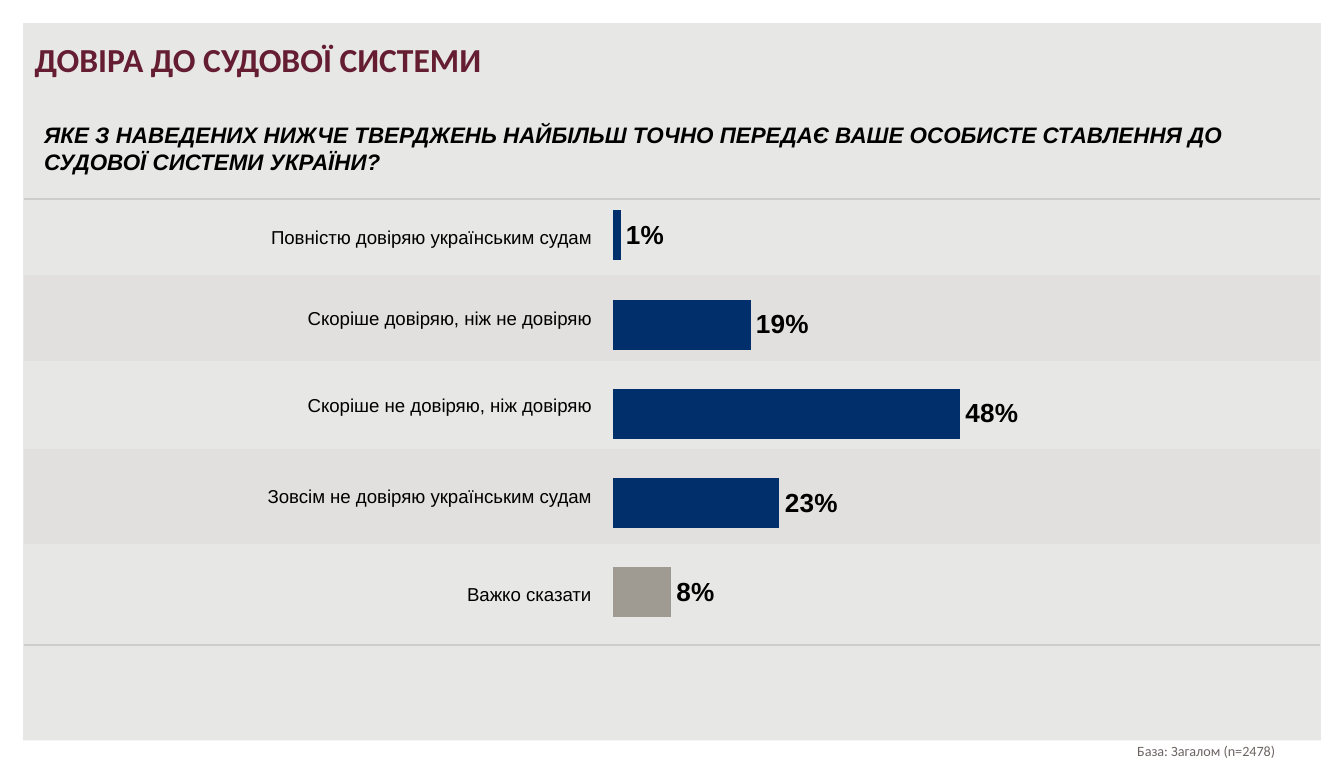
from lxml import etree
from pptx import Presentation
from pptx.chart.data import CategoryChartData
from pptx.dml.color import RGBColor
from pptx.enum.chart import XL_CHART_TYPE, XL_LABEL_POSITION
from pptx.enum.shapes import MSO_SHAPE
from pptx.enum.text import MSO_ANCHOR, PP_ALIGN
from pptx.oxml import parse_xml
from pptx.oxml.ns import nsdecls, qn
from pptx.util import Inches, Pt

BAR = XL_CHART_TYPE.BAR_CLUSTERED
OUTSIDE = XL_LABEL_POSITION.OUTSIDE_END
FRAME = MSO_SHAPE.FRAME
TOP, MIDDLE = MSO_ANCHOR.TOP, MSO_ANCHOR.MIDDLE
LEFT, CENTER, RIGHT = PP_ALIGN.LEFT, PP_ALIGN.CENTER, PP_ALIGN.RIGHT

COLORS = {
    "back": "E7E7E5", "white": "FFFFFF", "black": "000000",
    "rule": "CFCDC9", "band": "E2E0DF", "navy": "002F6C",
    "gray": "9F9B93", "wine": "651D32", "note": "6C6463",
}

ROWS = [
    ("Повністю довіряю українським судам", 0.57, 0.01),
    ("Скоріше довіряю, ніж не довіряю", 0.64, 0.19),
    ("Скоріше не довіряю, ніж довіряю", 0.65, 0.48),
    ("Зовсім не довіряю українським судам", 0.71, 0.23),
    ("Важко сказати", 0.75, 0.08),
]


def color(name):
    return RGBColor.from_string(COLORS[name])


def paint(fill, name):
    fill.solid()
    fill.fore_color.rgb = color(name)


def style(font, size, name="black", face="Arial", bold=False, italic=False):
    font.size, font.name = Pt(size), face
    font.bold, font.italic = bold, italic
    font.color.rgb = color(name)


def write(frame, text, align=LEFT, after=0, **form):
    para = frame.paragraphs[0]
    para.alignment = align
    para.space_after = Pt(after)
    run = para.add_run()
    run.text = text
    style(run.font, **form)


def add_text(slide, box, text, anchor=TOP, **form):
    frame = slide.shapes.add_textbox(*map(Inches, box)).text_frame
    frame.word_wrap = True
    frame.vertical_anchor = anchor
    write(frame, text, **form)


def add_frame(slide):
    shape = slide.shapes.add_shape(FRAME, 0, 0, Inches(10), Inches(5.68))
    shape.adjustments[0] = 0.03
    shape.shadow.inherit = False
    paint(shape.fill, "white")
    shape.line.fill.background()


def set_edges(cell, ruled):
    props = cell._tc.get_or_add_tcPr()
    for spot, side in enumerate(("L", "R", "T", "B")):
        line = etree.Element(qn(f"a:ln{side}"), w=str(Pt(1)))
        if side == ruled:
            fill = etree.SubElement(line, qn("a:solidFill"))
            etree.SubElement(fill, qn("a:srgbClr"), val=COLORS["rule"])
        else:
            etree.SubElement(line, qn("a:noFill"))
        props.insert(spot, line)


def add_table(slide):
    box = map(Inches, (0.18, 1.48, 9.64, 3.32))
    table = slide.shapes.add_table(len(ROWS), 2, *box).table
    table.first_row = table.horz_banding = False
    for col, width in zip(table.columns, (4.23, 5.41)):
        col.width = Inches(width)
    ruled = {0: "T", len(ROWS) - 1: "B"}
    for i, (text, height, _) in enumerate(ROWS):
        table.rows[i].height = Inches(height)
        for cell in table.rows[i].cells:
            if i % 2:
                paint(cell.fill, "band")
            else:
                cell.fill.background()
            set_edges(cell, ruled.get(i))
        label = table.cell(i, 0)
        label.vertical_anchor = MIDDLE
        label.margin_left = label.margin_right = label.margin_top = Inches(0.01)
        label.margin_bottom = 0
        write(label.text_frame, text, align=RIGHT, size=10)


def set_plot(chart, x, y, w, h):
    parts = {"layoutTarget": "inner", "xMode": "edge", "yMode": "edge",
             "x": x, "y": y, "w": w, "h": h}
    body = "".join(f'<c:{key} val="{val}"/>' for key, val in parts.items())
    area = chart._chartSpace.chart.plotArea
    for old in area.findall(qn("c:layout")):
        area.remove(old)
    area.insert(0, parse_xml(
        f'<c:layout {nsdecls("c")}><c:manualLayout>{body}</c:manualLayout></c:layout>'))


def add_chart(slide):
    data = CategoryChartData(number_format="0%")
    data.categories = [str(i + 1) for i in range(len(ROWS))]
    data.add_series("Series 1", [share for _, _, share in ROWS])
    box = map(Inches, (3.55, 1.42, 4.24, 3.32))
    chart = slide.shapes.add_chart(BAR, *box, data).chart
    chart.has_legend = chart.has_title = False
    style(chart.font, 18, face="Calibri")
    cats, vals = chart.category_axis, chart.value_axis
    cats.reverse_order = True
    cats.visible = vals.visible = False
    vals.has_major_gridlines = False
    vals.minimum_scale, vals.maximum_scale = 0, 0.6
    vals.tick_labels.number_format = "0%"
    vals.tick_labels.number_format_is_linked = False
    plot = chart.plots[0]
    plot.gap_width = 78
    plot.vary_by_categories = False
    bars = plot.series[0]
    bars.invert_if_negative = False
    paint(bars.format.fill, "navy")
    paint(bars.points[len(ROWS) - 1].format.fill, "gray")
    labels = bars.data_labels
    labels.show_value = True
    labels.number_format = "0%"
    labels.number_format_is_linked = False
    labels.position = OUTSIDE
    style(labels.font, 14, bold=True)
    set_plot(chart, 0.239, 0, 0.761, 1)


def main():
    deck = Presentation()
    deck.slide_width, deck.slide_height = Inches(10), Inches(5.67)
    slide = deck.slides.add_slide(deck.slide_layouts[6])
    paint(slide.background.fill, "back")
    add_frame(slide)
    add_table(slide)
    add_chart(slide)
    add_text(slide, (0.23, 0.85, 9.23, 0.5),
             "ЯКЕ З НАВЕДЕНИХ НИЖЧЕ ТВЕРДЖЕНЬ НАЙБІЛЬШ ТОЧНО ПЕРЕДАЄ ВАШЕ "
             "ОСОБИСТЕ СТАВЛЕННЯ ДО СУДОВОЇ СИСТЕМИ УКРАЇНИ?",
             after=8, size=12, bold=True, italic=True)
    add_text(slide, (0.16, 0.24, 9.36, 0.51), "ДОВІРА ДО СУДОВОЇ СИСТЕМИ",
             size=18, name="wine", face="Calibri", bold=True)
    add_text(slide, (8.1, 5.47, 1.75, 0.23), "База: Загалом (n=2478)",
             anchor=MIDDLE, align=CENTER, size=7.6, name="note", face="Calibri")
    deck.save("out.pptx")


if __name__ == "__main__":
    main()
